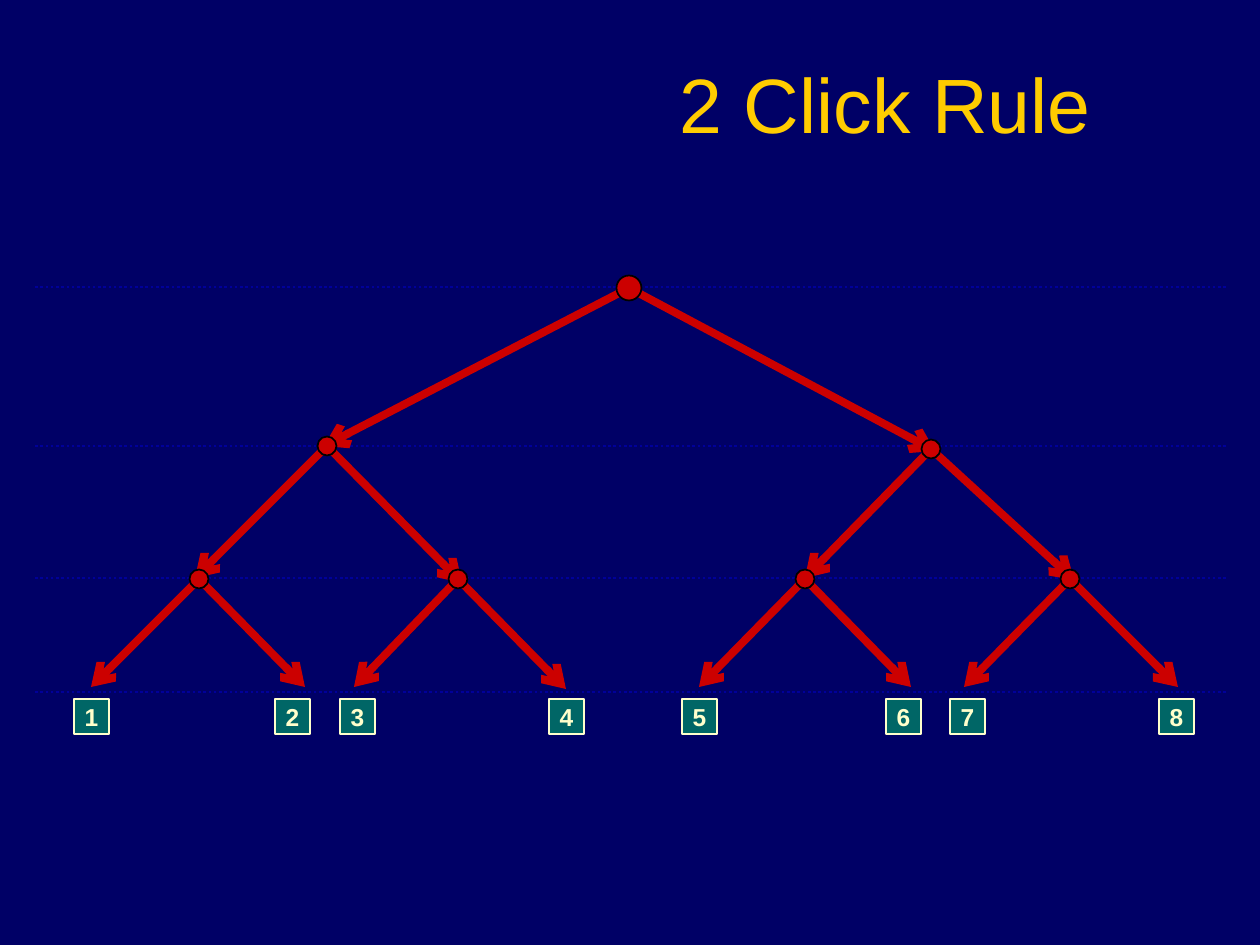
from pptx import Presentation
from pptx.dml.color import RGBColor
from pptx.enum.dml import MSO_LINE
from pptx.enum.shapes import MSO_CONNECTOR, MSO_SHAPE
from pptx.enum.text import MSO_ANCHOR, PP_ALIGN
from pptx.oxml import parse_xml
from pptx.oxml.ns import nsdecls
from pptx.util import Pt

NAVY = RGBColor(0x00, 0x00, 0x66)
BLUE = RGBColor(0x00, 0x00, 0x99)
RED = RGBColor(0xCC, 0x00, 0x00)
BLACK = RGBColor(0x00, 0x00, 0x00)
TEAL = RGBColor(0x00, 0x66, 0x66)
CREAM = RGBColor(0xFF, 0xFF, 0xCC)
GOLD = RGBColor(0xFF, 0xCC, 0x00)

TITLE = "2 Click Rule"
LEVELS = [287, 446, 578, 692]
NODES = {
    "root": (629, 288, 25),
    "left": (327, 446, 19),
    "right": (931, 449, 19),
    "left-left": (199, 579, 19),
    "left-right": (458, 579, 19),
    "right-left": (805, 579, 19),
    "right-right": (1070, 579, 19),
}
ARROWS = {
    "root": [(324, 446), (935, 451)],
    "left": [(195, 578), (462, 583)],
    "right": [(805, 578), (1074, 580)],
    "left-left": [(91, 687), (305, 687)],
    "left-right": [(354, 687), (566, 689)],
    "right-left": [(699, 687), (911, 687)],
    "right-right": [(964, 687), (1178, 687)],
}
PAGE_LEFTS = [74, 275, 340, 549, 682, 886, 950, 1159]
PAGE_TOP, PAGE_SIZE = 699, 35


def px(n):
    return round(n * 914400 / 126)


def add_line(s, start, end, color, width):
    c = s.shapes.add_connector(MSO_CONNECTOR.STRAIGHT, *map(px, start + end))
    c.line.color.rgb = color
    c.line.width = Pt(width)
    c._element.spPr.append(parse_xml(f"<a:effectLst {nsdecls('a')}/>"))
    return c


def add_box(s, kind, x, y, size, fill, line):
    sp = s.shapes.add_shape(kind, px(x), px(y), px(size), px(size))
    sp.shadow.inherit = False
    sp.fill.solid()
    sp.fill.fore_color.rgb = fill
    sp.line.color.rgb = line
    sp.line.width = Pt(1)
    return sp


def set_text(sp, text, size, color, align, bold=False, inset=0, shadow=False):
    tf = sp.text_frame
    tf.word_wrap = True
    tf.vertical_anchor = MSO_ANCHOR.MIDDLE
    tf.margin_left = tf.margin_right = px(inset)
    tf.margin_top = tf.margin_bottom = 0
    p = tf.paragraphs[0]
    p.alignment = align
    r = p.add_run()
    r.text = text
    r.font.size = Pt(size)
    r.font.bold = bold
    r.font.color.rgb = color
    if shadow:
        r.font._element.append(parse_xml(
            f"<a:effectLst {nsdecls('a')}>"
            '<a:outerShdw dist="38100" dir="2700000">'
            '<a:srgbClr val="000000"/></a:outerShdw></a:effectLst>'))
    r.font.name = "Arial"


def main():
    """Build the slide with the two-click tree."""
    prs = Presentation()
    prs.slide_width, prs.slide_height = px(1260), px(945)
    s = prs.slides.add_slide(prs.slide_layouts[6])
    s.background.fill.solid()
    s.background.fill.fore_color.rgb = NAVY

    for y in LEVELS:
        c = add_line(s, (1226, y), (34, y), BLUE, 1.5)
        c.line.dash_style = MSO_LINE.ROUND_DOT

    title = s.shapes.add_textbox(0, px(24), px(1104), px(158))
    set_text(title, TITLE, 44, GOLD, PP_ALIGN.RIGHT, inset=13, shadow=True)

    for name, tips in ARROWS.items():
        for tip in tips:
            c = add_line(s, NODES[name][:2], tip, RED, 4.5)
            c.line._get_or_add_ln().append(
                parse_xml(f'<a:tailEnd {nsdecls("a")} type="arrow"/>'))

    for number, x in enumerate(PAGE_LEFTS, 1):
        sp = add_box(s, MSO_SHAPE.RECTANGLE, x, PAGE_TOP, PAGE_SIZE, TEAL, CREAM)
        set_text(sp, str(number), 14, CREAM, PP_ALIGN.CENTER, bold=True)

    for x, y, size in NODES.values():
        add_box(s, MSO_SHAPE.OVAL, x - size / 2, y - size / 2, size, RED, BLACK)

    prs.save("out.pptx")


if __name__ == "__main__":
    main()
